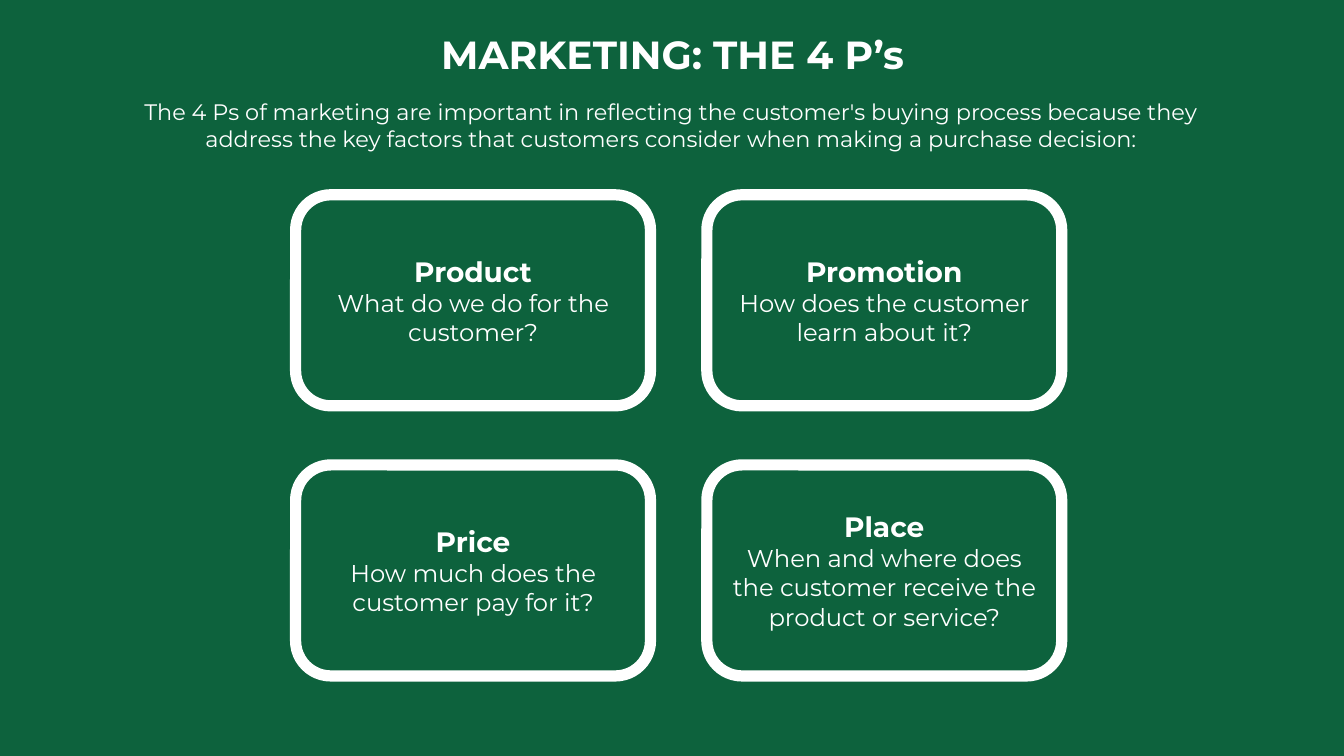
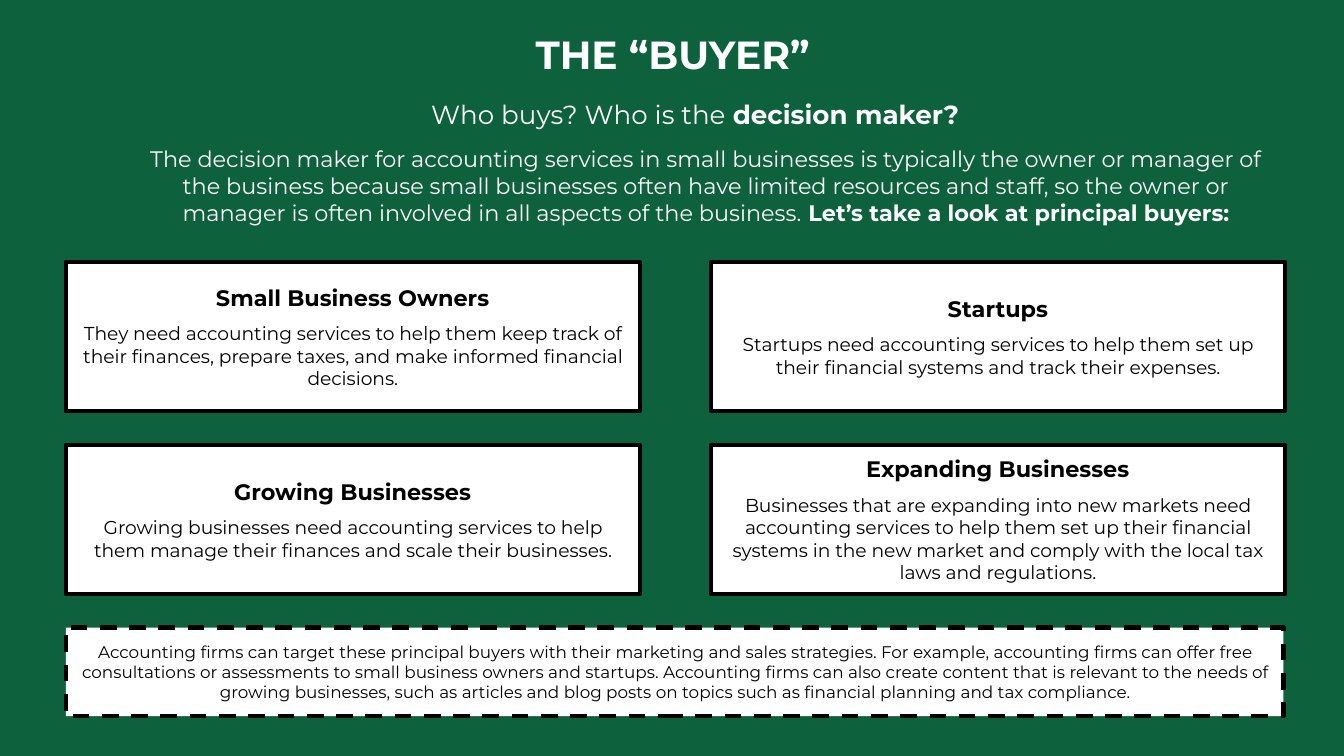
"""Build two slides on the marketing mix and the principal buyers."""
from pptx import Presentation
from pptx.dml.color import RGBColor
from pptx.enum.dml import MSO_LINE
from pptx.enum.shapes import MSO_SHAPE
from pptx.enum.text import MSO_ANCHOR, MSO_AUTO_SIZE, PP_ALIGN
from pptx.util import Inches, Pt

GREEN = RGBColor(0x0D, 0x62, 0x3D)
WHITE = RGBColor(0xFF, 0xFF, 0xFF)
BLACK = RGBColor(0x00, 0x00, 0x00)
FONT = "Montserrat"

RECT = MSO_SHAPE.RECTANGLE
ROUNDED = MSO_SHAPE.ROUNDED_RECTANGLE
TOP, MIDDLE = MSO_ANCHOR.TOP, MSO_ANCHOR.MIDDLE
LEFT, CENTER = PP_ALIGN.LEFT, PP_ALIGN.CENTER
NO_FIT, GROW = MSO_AUTO_SIZE.NONE, MSO_AUTO_SIZE.SHAPE_TO_FIT_TEXT
DASH = MSO_LINE.DASH
TITLE_ONLY = 5

FOUR_PS = [
    ("Product", "What do we do for the customer?"),
    ("Promotion", "How does the customer learn about it?"),
    ("Price", "How much does the customer pay for it?"),
    ("Place", "When and where does the customer receive the product or service?"),
]
BUYERS = [
    ("Small Business Owners",
     "They need accounting services to help them keep track of their finances, "
     "prepare taxes, and make informed financial decisions."),
    ("Startups",
     "Startups need accounting services to help them set up their financial "
     "systems and track their expenses."),
    ("Growing Businesses",
     "Growing businesses need accounting services to help them manage their "
     "finances and scale their businesses."),
    ("Expanding Businesses",
     "Businesses that are expanding into new markets need accounting services "
     "to help them set up their financial systems in the new market and comply "
     "with the local tax laws and regulations."),
]


def set_frame(tf, anchor=TOP, auto_size=NO_FIT):
    """Give a text frame the shared insets and wrapping."""
    tf.word_wrap = True
    tf.auto_size = auto_size
    tf.vertical_anchor = anchor
    tf.margin_left = tf.margin_right = Inches(0.1)
    tf.margin_top = tf.margin_bottom = Inches(0.1)


def write(p, text, size, color=WHITE, bold=False, align=CENTER):
    """Add a formatted run to a paragraph."""
    p.alignment = align
    r = p.add_run()
    r.text = text
    r.font.name = FONT
    r.font.size = Pt(size)
    r.font.bold = bold
    r.font.color.rgb = color


def add_slide(prs, title):
    """Add a slide with the shared title style."""
    slide = prs.slides.add_slide(prs.slide_layouts[TITLE_ONLY])
    sp = slide.shapes.title
    sp.left, sp.top = Inches(1.41), Inches(0.19)
    sp.width, sp.height = Inches(7.19), Inches(0.44)
    set_frame(sp.text_frame)
    p = sp.text_frame.paragraphs[0]
    p.line_spacing = 0.8
    write(p, title, 21, bold=True)
    return slide


def add_text(slide, box, text, size, ending="", align=CENTER):
    """Add a text box with an optional bold ending."""
    sp = slide.shapes.add_textbox(*map(Inches, box))
    set_frame(sp.text_frame, auto_size=GROW)
    p = sp.text_frame.paragraphs[0]
    write(p, text, size, align=align)
    if ending:
        write(p, ending, size, bold=True, align=align)


def add_box(slide, box, kind=RECT, fill=WHITE, line=BLACK, weight=2.25, dash=None):
    """Add an outlined box and return its text frame."""
    sp = slide.shapes.add_shape(kind, *map(Inches, box))
    sp.shadow.inherit = False
    sp.fill.solid()
    sp.fill.fore_color.rgb = fill
    sp.line.color.rgb = line
    sp.line.width = Pt(weight)
    if dash:
        sp.line.dash_style = dash
    set_frame(sp.text_frame, MIDDLE)
    return sp.text_frame


def add_cards(slide, cards, first, pitch, sizes, color, gap=0, **style):
    """Place headed cards in two columns, row by row."""
    left, top, width, height = first
    for i, (heading, body) in enumerate(cards):
        row, col = divmod(i, 2)
        box = (left + col * pitch[0], top + row * pitch[1], width, height)
        tf = add_box(slide, box, **style)
        p = tf.paragraphs[0]
        p.space_after = Pt(gap)
        write(p, heading, sizes[0], color, bold=True)
        write(tf.add_paragraph(), body, sizes[1], color)


def build_four_ps(prs):
    """Build the slide on the four Ps."""
    slide = add_slide(prs, "MARKETING: THE 4 P’s")
    add_text(slide, (0.97, 0.63, 8.05, 0.61),
             "The 4 Ps of marketing are important in reflecting the customer's "
             "buying process because they address the key factors that customers "
             "consider when making a purchase decision:", 12)
    add_cards(slide, FOUR_PS, (2.2, 1.45, 2.64, 1.57), (3.06, 2.01), (15, 13),
              WHITE, kind=ROUNDED, fill=GREEN, line=WHITE, weight=6)


def build_buyer(prs):
    """Build the slide on the principal buyers."""
    slide = add_slide(prs, "THE “BUYER”")
    add_text(slide, (3.11, 0.63, 4.23, 0.44), "Who buys? Who is the ", 14,
             ending="decision maker?", align=LEFT)
    add_text(slide, (0.96, 0.98, 8.59, 0.81),
             "The decision maker for accounting services in small businesses is "
             "typically the owner or manager of the business because small "
             "businesses often have limited resources and staff, so the owner or "
             "manager is often involved in all aspects of the business.", 12,
             ending=" Let’s take a look at principal buyers:")
    add_cards(slide, BUYERS, (0.49, 1.95, 4.27, 1.11), (4.8, 1.36), (12, 10),
              BLACK, gap=6)
    tf = add_box(slide, (0.49, 4.67, 9.06, 0.66), dash=DASH)
    write(tf.paragraphs[0],
          "Accounting firms can target these principal buyers with their marketing "
          "and sales strategies. For example, accounting firms can offer free "
          "consultations or assessments to small business owners and startups. "
          "Accounting firms can also create content that is relevant to the needs "
          "of growing businesses, such as articles and blog posts on topics such "
          "as financial planning and tax compliance.", 9, BLACK)


def main():
    """Create the presentation and save it."""
    prs = Presentation()
    prs.slide_width = Inches(10)
    prs.slide_height = Inches(10 * 9 / 16)
    bg = prs.slide_master.background.fill
    bg.solid()
    bg.fore_color.rgb = GREEN
    build_four_ps(prs)
    build_buyer(prs)
    prs.save("out.pptx")


if __name__ == "__main__":
    main()
